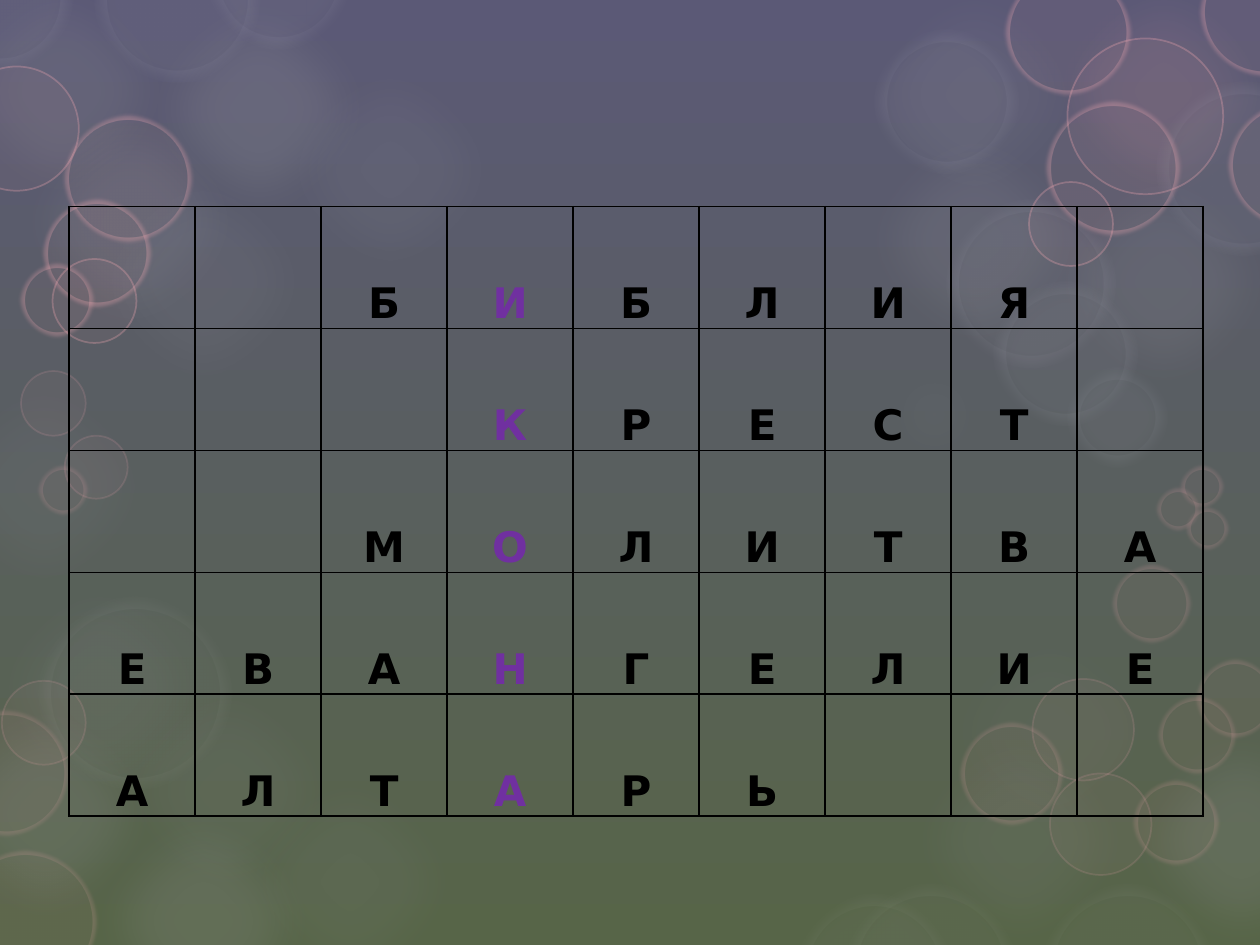
from lxml.etree import SubElement
from pptx import Presentation
from pptx.dml.color import RGBColor
from pptx.enum.shapes import MSO_SHAPE
from pptx.enum.text import MSO_ANCHOR, PP_ALIGN
from pptx.oxml.ns import qn
from pptx.util import Pt

WIDE, HIGH = 720, 540
COLORS = {
    "top": "5B5976", "base": "576548", "haze": "9D9DA2", "ring": "E5E5E6",
    "pink": "F0A7B1", "ink": "000000", "key": "7030A0",
}

# Soft circles: colour, opacity, left, top, diameter
HAZE = [
    ("haze", 8, -18, 318, 150), ("haze", 10, 41, 86, 150),
    ("haze", 10, 148, 22, 150), ("haze", 16, 41, 451, 150),
    ("haze", 14, -40, -23, 150), ("haze", 20, 73, -13, 150),
    ("haze", 15, 0, 52, 150), ("pink", 10, 590, -23, 150),
    ("haze", 10, 482, -21, 150), ("haze", 15, 590, 86, 150),
    ("haze", 16, 634, 405, 150), ("haze", 5, 525, 343, 150),
    ("haze", 16, -49, 390, 150), ("haze", 8, 55, 377, 150),
    ("haze", 15, 482, 62, 150), ("haze", 10, 508, 405, 150),
    ("haze", 8, 125, 429, 150), ("haze", 8, -50, 203, 150),
    ("haze", 10, 486, 189, 96),
]

# Outlined circles: (fill, opacity, line, width, line opacity, soft edge),
# then left, top, diameter of each
RINGS = [
    (("haze", 10, "ring", 14, 6, 9), [
        (661, 47, 99), (500, 17, 82), (541, 114, 96), (568, 161, 82),
        (610, 210, 57), (54, -47, 94), (118, -54, 82), (-41, -42, 82)]),
    (("haze", 6, "ring", 14, 4, 9), [
        (22, 341, 110), (454, 511, 91), (482, 505, 99), (595, 505, 99)]),
    (("pink", 5, "pink", 1, 15, 0), [
        (1, 389, 48), (600, 442, 58), (590, 388, 58), (12, 212, 37),
        (37, 249, 36)]),
    (("pink", 5, "pink", 5, 15, 2.5), [
        (-26, 486, 81), (-32, 406, 71), (549, 413, 58), (648, 446, 48),
        (636, 323, 44), (662, 398, 44), (684, 377, 44), (675, 266, 24),
        (661, 279, 24), (678, 290, 24), (22, 266, 28)]),
    (("pink", 5, "pink", 1, 30, 0), [
        (-26, 38, 71), (30, 148, 48), (610, 22, 89), (588, 104, 48)]),
    (("pink", 5, "pink", 5, 30, 2.5), [
        (37, 66, 72), (25, 114, 61), (12, 151, 41), (575, -17, 71),
        (686, -29, 72), (702, 59, 71), (598, 58, 76)]),
]

# Crossword answers, each with its first column
WORDS = [(2, "БИБЛИЯ"), (3, "КРЕСТ"), (2, "МОЛИТВА"),
         (0, "ЕВАНГЕЛИЕ"), (0, "АЛТАРЬ")]
KEY_COL = 3


def rgb(name):
    return RGBColor.from_string(COLORS[name])


def paint(fill, name, alpha):
    fill.solid()
    fill.fore_color.rgb = rgb(name)
    color = fill._xPr.find(".//" + qn("a:srgbClr"))
    SubElement(color, qn("a:alpha")).set("val", str(alpha * 1000))


def add_disc(slide, box, name, alpha, line=None, width=0, faint=0, soft=0):
    left, top, size = box
    disc = slide.shapes.add_shape(
        MSO_SHAPE.OVAL, Pt(left), Pt(top), Pt(size), Pt(size))
    paint(disc.fill, name, alpha)
    if line:
        disc.line.width = Pt(width)
        paint(disc.line.fill, line, faint)
    else:
        disc.line.fill.background()
    disc.shadow.inherit = False
    node = disc._element
    if soft:
        effects = node.spPr.find(qn("a:effectLst"))
        SubElement(effects, qn("a:softEdge")).set("rad", str(Pt(soft)))
    # The decoration belongs to the master
    tree = slide.slide_layout.slide_master.shapes._spTree
    node.nvSpPr.cNvPr.set("id", str(100 + len(tree)))
    tree.append(node)


def add_backdrop(slide):
    fill = slide.background.fill
    fill.gradient()
    fill.gradient_angle = 270
    for stop, name, place in zip(fill.gradient_stops, ("top", "base"), (0, 1)):
        stop.color.rgb = rgb(name)
        stop.position = place
    for name, alpha, *box in HAZE:
        add_disc(slide, box, name, alpha, soft=25)
    for style, boxes in RINGS:
        for box in boxes:
            add_disc(slide, box, *style)


def add_borders(cell):
    props = cell._tc.get_or_add_tcPr()
    for place, side in enumerate(("lnL", "lnR", "lnT", "lnB")):
        edge = SubElement(props, qn("a:" + side), w=str(Pt(1)))
        fill = SubElement(edge, qn("a:solidFill"))
        SubElement(fill, qn("a:srgbClr"), val=COLORS["ink"])
        props.insert(place, edge)


def add_letter(cell, letter, name):
    cell.text_frame.text = letter
    cell.vertical_anchor = MSO_ANCHOR.BOTTOM
    cell.margin_left = cell.margin_right = cell.margin_top = Pt(0.75)
    cell.margin_bottom = 0
    line = cell.text_frame.paragraphs[0]
    line.alignment = PP_ALIGN.CENTER
    font = line.runs[0].font
    font.name, font.size, font.bold = "DejaVu Sans", Pt(24), True
    font.color.rgb = rgb(name)


def add_grid(slide, left, top, width, height):
    cols = 9
    grid = slide.shapes.add_table(
        len(WORDS), cols, Pt(left), Pt(top), Pt(width), Pt(height)).table
    grid.first_row = grid.horz_banding = False
    for cell in grid.iter_cells():
        cell.fill.background()
        add_borders(cell)
    for row, (start, word) in enumerate(WORDS):
        for col, letter in enumerate(word, start):
            name = "key" if col == KEY_COL else "ink"
            add_letter(grid.cell(row, col), letter, name)


def main():
    deck = Presentation()
    deck.slide_width, deck.slide_height = Pt(WIDE), Pt(HIGH)
    slide = deck.slides.add_slide(deck.slide_layouts[6])
    add_backdrop(slide)
    add_grid(slide, 39.5, 118, 648, 348.5)
    deck.save("out.pptx")


if __name__ == "__main__":
    main()
